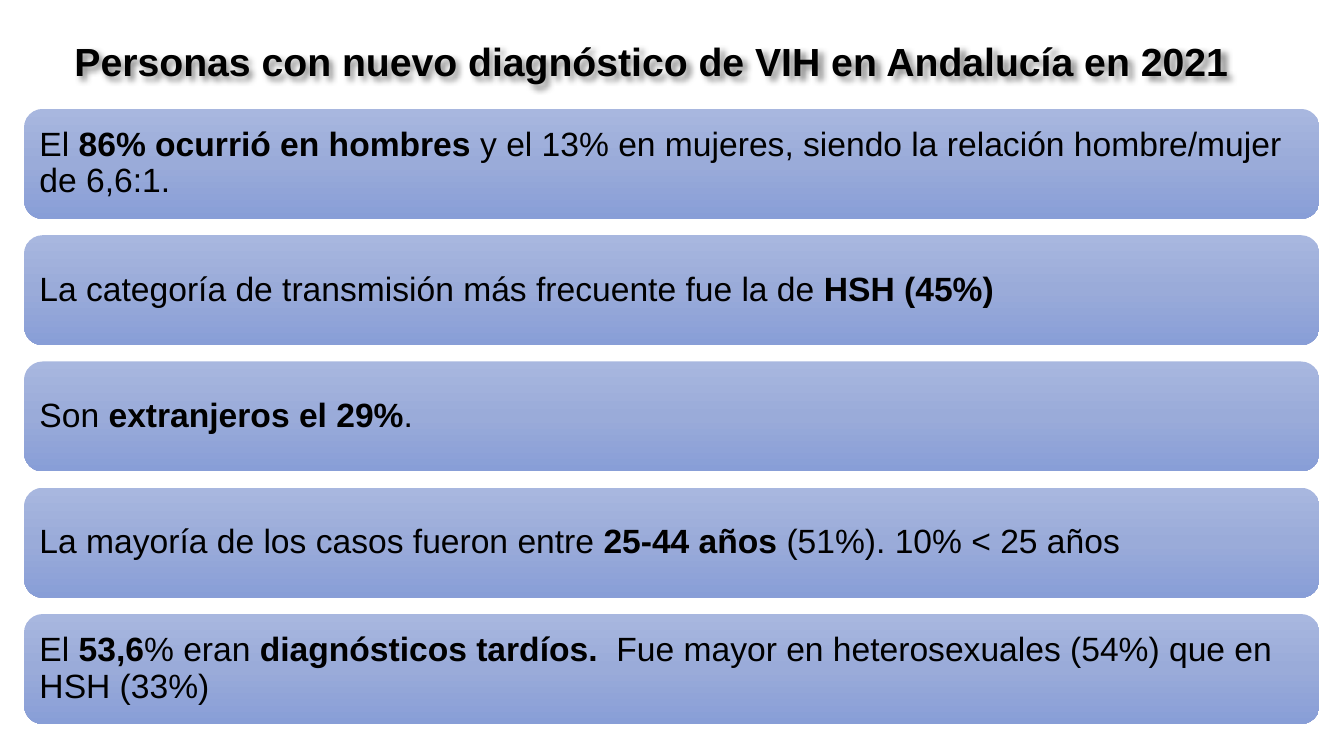
from copy import deepcopy

from lxml import etree
from pptx import Presentation
from pptx.dml.color import RGBColor
from pptx.enum.shapes import MSO_SHAPE
from pptx.enum.text import MSO_ANCHOR, PP_ALIGN
from pptx.util import Pt

ROUNDED = MSO_SHAPE.ROUNDED_RECTANGLE
MIDDLE = MSO_ANCHOR.MIDDLE
LEFT = PP_ALIGN.LEFT

CARD_LEFT, CARD_TOP = 17.3, 77.8
CARD_WIDTH, CARD_HEIGHT = 925.2, 78.5
CARD_PITCH = 90.2
GRADIENT = ["A8B7DF", "9AABD9", "889ED7"]

TITLE_SHADOW = """
<a:effectLst xmlns:a="http://schemas.openxmlformats.org/drawingml/2006/main">
  <a:outerShdw blurRad="38100" dist="38100" dir="2700000" algn="tl">
    <a:srgbClr val="000000"><a:alpha val="43000"/></a:srgbClr>
  </a:outerShdw>
</a:effectLst>"""

FINDINGS = [
    [("El ", False), ("86% ocurrió en hombres ", True),
     ("y el 13% en mujeres, siendo la relación hombre/mujer de 6,6:1.", False)],
    [("La categoría de transmisión más frecuente fue la de", False), (" HSH (45%)", True)],
    [("Son ", False), ("extranjeros el 29%", True), (".", False)],
    [("La mayoría de los casos fueron entre ", False), ("25-44 años ", True),
     ("(51%). 10% < 25 años", False)],
    [("El ", False), ("53,6", True), ("% eran ", False), ("diagnósticos tardíos.", True),
     ("  Fue mayor en heterosexuales (54%) que en HSH (33%)", False)],
]


def color(value):
    return RGBColor.from_string(value)


def style(span, size, bold):
    span.font.name = "Arial"
    span.font.size = Pt(size)
    span.font.bold = bold
    span.font.color.rgb = color("000000")


deck = Presentation()
deck.slide_width, deck.slide_height = Pt(960), Pt(540)
page = deck.slides.add_slide(deck.slide_layouts[6])

for row, finding in enumerate(FINDINGS):
    card = page.shapes.add_shape(
        ROUNDED, Pt(CARD_LEFT), Pt(CARD_TOP + row * CARD_PITCH), Pt(CARD_WIDTH), Pt(CARD_HEIGHT))
    card.shadow.inherit = False
    card.line.fill.background()
    card.fill.gradient()
    card.fill.gradient_angle = 270
    first_stop = card.fill._fill._gradFill.gsLst[0]
    first_stop.addnext(deepcopy(first_stop))
    for index, stop in enumerate(card.fill.gradient_stops):
        stop.position = index / 2
        stop.color.rgb = color(GRADIENT[index])

    frame = card.text_frame
    frame.word_wrap = True
    frame.vertical_anchor = MIDDLE
    frame.margin_left = frame.margin_right = Pt(7.2)
    frame.margin_top = frame.margin_bottom = Pt(7.2)
    para = frame.paragraphs[0]
    para.alignment = LEFT
    para.line_spacing = 0.9
    for words, bold in finding:
        span = para.add_run()
        span.text = words
        style(span, 24, bold)

title = page.shapes.add_textbox(Pt(46.1), Pt(23), Pt(866), Pt(40.3))
title.text_frame.word_wrap = True
title.text_frame.text = "Personas con nuevo diagnóstico de VIH en Andalucía en 2021"
style(title.text_frame.paragraphs[0].runs[0], 28, True)
title._element.spPr.append(etree.fromstring(TITLE_SHADOW))

deck.save("out.pptx")
